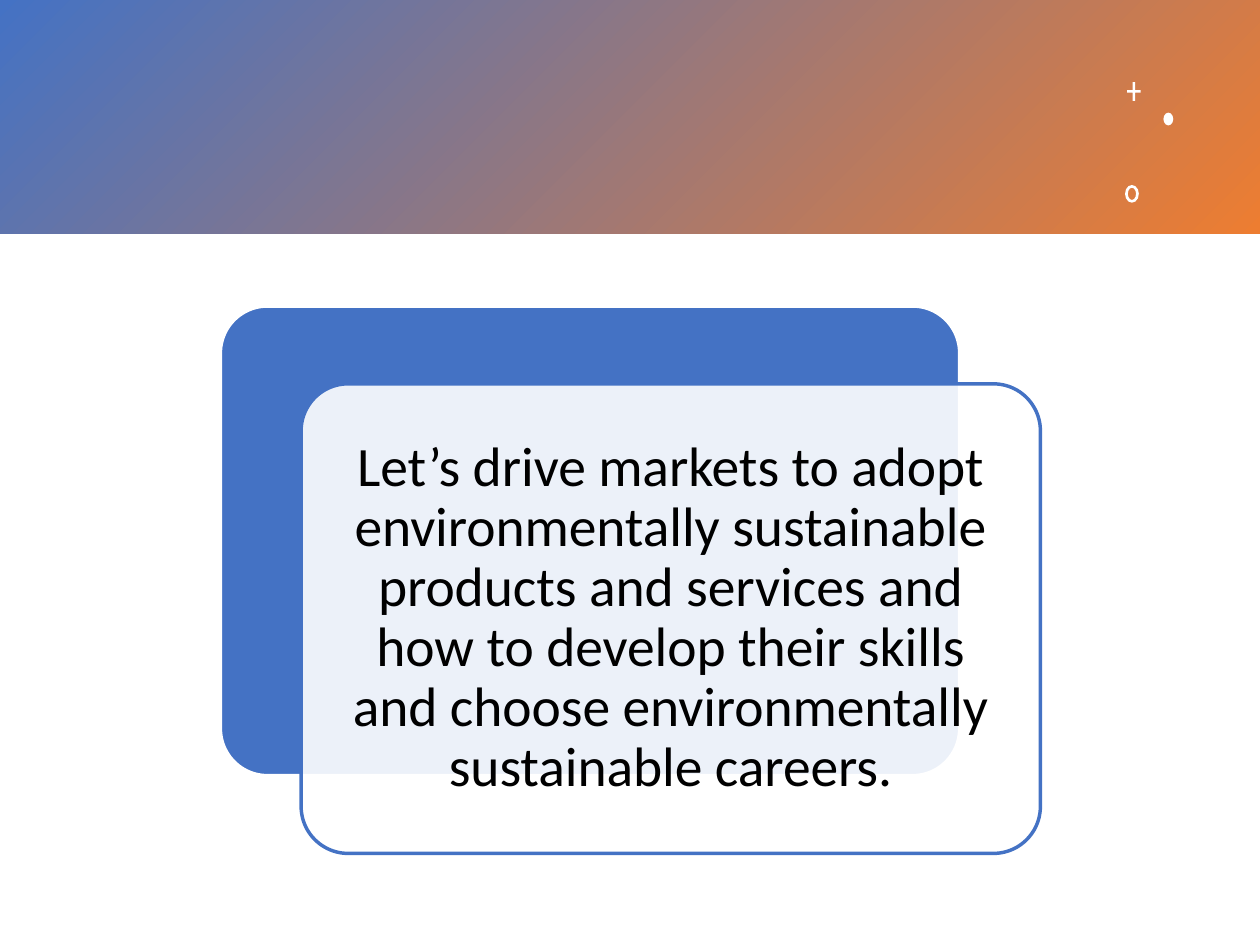
from pptx import Presentation
from pptx.dml.color import RGBColor
from pptx.enum.shapes import MSO_SHAPE
from pptx.enum.text import MSO_ANCHOR, PP_ALIGN
from pptx.oxml.ns import qn
from pptx.util import Cm, Pt
from lxml.etree import SubElement

# Content
BLUE, ORANGE, WHITE, BLACK = "4472C4", "ED7D31", "FFFFFF", "000000"
WIDE, HIGH, BAND = 12.8, 9.63, 2.37
TEXT = ("Let’s drive markets to adopt environmentally sustainable products "
        "and services and how to develop their skills and choose "
        "environmentally sustainable careers.")
# Marks: shape, centre x, centre y, width, height, adjustment
MARKS = [
    (MSO_SHAPE.MATH_PLUS, 11.52, 0.93, 0.19, 0.26, 0.13),
    (MSO_SHAPE.OVAL, 11.87, 1.21, 0.1, 0.13, None),
    (MSO_SHAPE.DONUT, 11.5, 1.97, 0.14, 0.18, 0.2),
]
# Panels: fill, line, opacity in percent
PANELS = [(BLUE, WHITE, 100), (WHITE, BLUE, 90)]
LEFT, TOP, PANEL_W, PANEL_H = 2.24, 3.11, 7.51, 4.77
STEP_X, STEP_Y = 0.82, 0.79


def color(code):
    return RGBColor.from_string(code)


def draw(slide, kind, x, y, w, h, fill=None, line=None, adj=None):
    shape = slide.shapes.add_shape(kind, Cm(x), Cm(y), Cm(w), Cm(h))
    shape.shadow.inherit = False
    if fill:
        shape.fill.solid()
        shape.fill.fore_color.rgb = color(fill)
    if line:
        shape.line.color.rgb = color(line)
        shape.line.width = Pt(1)
    else:
        shape.line.fill.background()
    if adj is not None:
        shape.adjustments[0] = adj
    return shape


def fade(shape, part):
    tint = shape.fill._xPr.find(qn("a:solidFill"))[0]
    SubElement(tint, qn("a:alpha")).set("val", str(part * 1000))


def write(shape, text):
    frame = shape.text_frame
    frame.word_wrap = True
    frame.vertical_anchor = MSO_ANCHOR.MIDDLE
    frame.margin_left = frame.margin_right = Cm(0.18)
    frame.margin_top = frame.margin_bottom = Cm(0.18)
    para = frame.paragraphs[0]
    para.alignment = PP_ALIGN.CENTER
    para.line_spacing = 0.9
    run = para.add_run()
    run.text = text
    run.font.name = "Calibri"
    run.font.size = Pt(16)
    run.font.color.rgb = color(BLACK)


def main():
    deck = Presentation()
    deck.slide_width, deck.slide_height = Cm(WIDE), Cm(HIGH)
    slide = deck.slides.add_slide(deck.slide_layouts[6])

    # Header band
    band = draw(slide, MSO_SHAPE.RECTANGLE, 0, 0, WIDE, BAND)
    band.fill.gradient()
    band.fill.gradient_angle = 315
    for stop, code in zip(band.fill.gradient_stops, (BLUE, ORANGE)):
        stop.color.rgb = color(code)

    # Small marks
    for kind, x, y, w, h, adj in MARKS:
        draw(slide, kind, x - w / 2, y - h / 2, w, h, WHITE, adj=adj)

    # Stepped panels, text on the front one
    for i, (fill, line, part) in enumerate(PANELS):
        panel = draw(slide, MSO_SHAPE.ROUNDED_RECTANGLE,
                     LEFT + i * STEP_X, TOP + i * STEP_Y,
                     PANEL_W, PANEL_H, fill, line, 0.1)
        fade(panel, part)
    write(panel, TEXT)

    deck.save("out.pptx")


if __name__ == "__main__":
    main()
